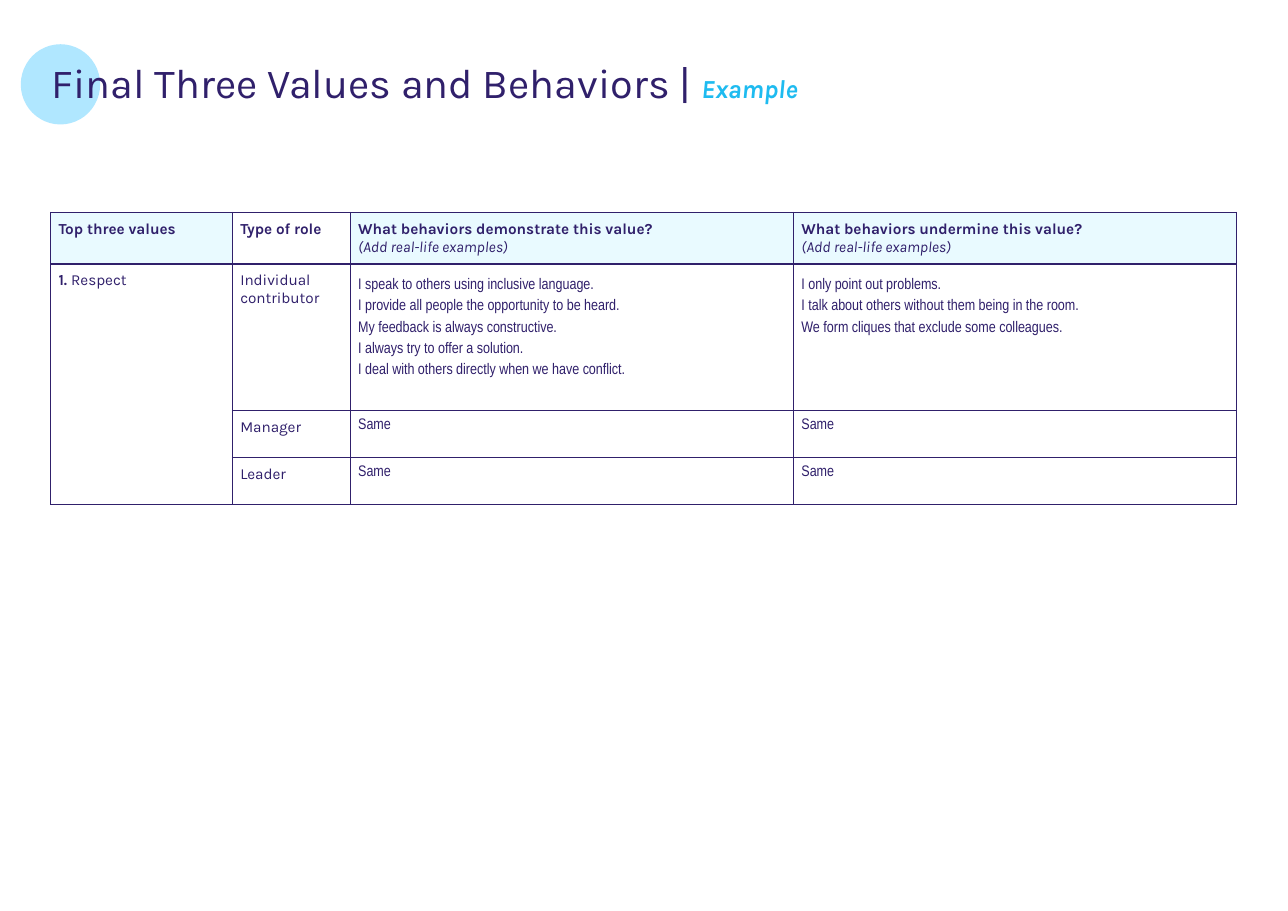
from lxml.etree import fromstring
from pptx import Presentation
from pptx.dml.color import RGBColor
from pptx.enum.shapes import MSO_SHAPE
from pptx.enum.text import MSO_ANCHOR, MSO_AUTO_SIZE, PP_ALIGN
from pptx.util import Cm, Pt

INDIGO = RGBColor(0x30, 0x20, 0x6B)
CYAN = RGBColor(0x1E, 0xBB, 0xF0)
SKY = RGBColor(0xB0, 0xE7, 0xFF)
PALE = RGBColor(0xE9, 0xFA, 0xFF)
WHITE = RGBColor(0xFF, 0xFF, 0xFF)
KARLA, NARROW = "Karla", "Arial Narrow"

# Content: each cell is a list of lines
TITLE = "Final Three Values and Behaviors | "
TITLE_TAG = "Example"
HINT = "(Add real-life examples)"
HEADER = [
    ["Top three values"],
    ["Type of role"],
    ["What behaviors demonstrate this value?", HINT],
    ["What behaviors undermine this value?", HINT],
]
HEADER_FILLS = [PALE, WHITE, PALE, PALE]
VALUE_NUMBER, VALUE_NAME = "1. ", "Respect"
ROLES = [
    ("Individual contributor",
     ["I speak to others using inclusive language.",
      "I provide all people the opportunity to be heard.",
      "My feedback is always constructive.",
      "I always try to offer a solution.",
      "I deal with others directly when we have conflict."],
     ["I only point out problems.",
      "I talk about others without them being in the room.",
      "We form cliques that exclude some colleagues."]),
    ("Manager", ["Same"], ["Same"]),
    ("Leader", ["Same"], ["Same"]),
]
COLUMN_WIDTHS = [4.19, 2.72, 10.22, 10.22]
ROW_HEIGHTS = [1.18, 3.38, 1.08, 1.08]
CELL_MARGIN = Cm(0.18)
BORDER = ('<a:{side} xmlns:a="http://schemas.openxmlformats.org/drawingml/2006/main" '
          'w="12700"><a:solidFill><a:srgbClr val="{color}"/></a:solidFill></a:{side}>')


def style_font(font, name, size, color, bold=False, italic=False):
    font.name, font.size, font.bold, font.italic = name, Pt(size), bold, italic
    font.color.rgb = color


def style_cell(cell, fill=None):
    properties = cell._tc.get_or_add_tcPr()
    for side in ("lnL", "lnR", "lnT", "lnB"):
        properties.append(fromstring(BORDER.format(side=side, color=INDIGO)))
    cell.margin_left = cell.margin_right = CELL_MARGIN
    cell.margin_top = cell.margin_bottom = CELL_MARGIN
    if fill is None:
        cell.fill.background()
    else:
        cell.fill.solid()
        cell.fill.fore_color.rgb = fill


def write_lines(cell, lines, font_name=KARLA, spacing=1.0, header=False):
    cell.text = "\n".join(lines)
    for para, line in zip(cell.text_frame.paragraphs, lines):
        para.line_spacing = spacing
        hint = line == HINT
        style_font(para.font, font_name, 10, INDIGO, header and not hint, hint)


deck = Presentation()
deck.slide_width, deck.slide_height = Cm(29.7), Cm(21)
page = deck.slides.add_slide(deck.slide_layouts[5])

# Circle behind the title
circle = page.shapes.add_shape(MSO_SHAPE.OVAL, Cm(0.48), Cm(1.02), Cm(1.83), Cm(1.85))
circle.shadow.inherit = False
circle.fill.solid()
circle.fill.fore_color.rgb = SKY
circle.line.fill.background()

# Title, brought in front of the circle
title = page.shapes.title
circle._element.addnext(title._element)
title.left, title.top, title.width, title.height = Cm(1.19), Cm(1.45), Cm(25.5), Cm(2.13)
frame = title.text_frame
frame.auto_size = MSO_AUTO_SIZE.NONE
frame.vertical_anchor = MSO_ANCHOR.TOP
frame.margin_left = frame.margin_top = frame.margin_right = frame.margin_bottom = 0
para = frame.paragraphs[0]
para.alignment, para.line_spacing = PP_ALIGN.LEFT, 0.9
for text, size, color, accent in ((TITLE, 27, INDIGO, False), (TITLE_TAG, 17, CYAN, True)):
    span = para.add_run()
    span.text = text
    style_font(span.font, KARLA, size, color, accent, accent)

# Table grid
table = page.shapes.add_table(
    len(ROW_HEIGHTS), len(COLUMN_WIDTHS), Cm(1.17), Cm(4.9),
    Cm(sum(COLUMN_WIDTHS)), Cm(sum(ROW_HEIGHTS))).table
table.first_row = table.horz_banding = False
for column, width in zip(table.columns, COLUMN_WIDTHS):
    column.width = Cm(width)
for row, height in zip(table.rows, ROW_HEIGHTS):
    row.height = Cm(height)
for row_index, row in enumerate(table.rows):
    for cell, fill in zip(row.cells, HEADER_FILLS):
        style_cell(cell, fill if row_index == 0 else None)

# Header row
for cell, lines in zip(table.rows[0].cells, HEADER):
    write_lines(cell, lines, header=True)

# Value spanning all roles
value = table.cell(1, 0)
value.merge(table.cell(len(ROLES), 0))
para = value.text_frame.paragraphs[0]
for text, bold in ((VALUE_NUMBER, True), (VALUE_NAME, False)):
    span = para.add_run()
    span.text = text
    style_font(span.font, KARLA, 10, INDIGO, bold)

# Roles and their behaviors
for row_index, (role, *behaviors) in enumerate(ROLES, start=1):
    write_lines(table.cell(row_index, 1), [role])
    for column_index, lines in enumerate(behaviors, start=2):
        spacing = 1.5 if len(lines) > 1 else 1.0
        write_lines(table.cell(row_index, column_index), lines, NARROW, spacing)

deck.save("out.pptx")
